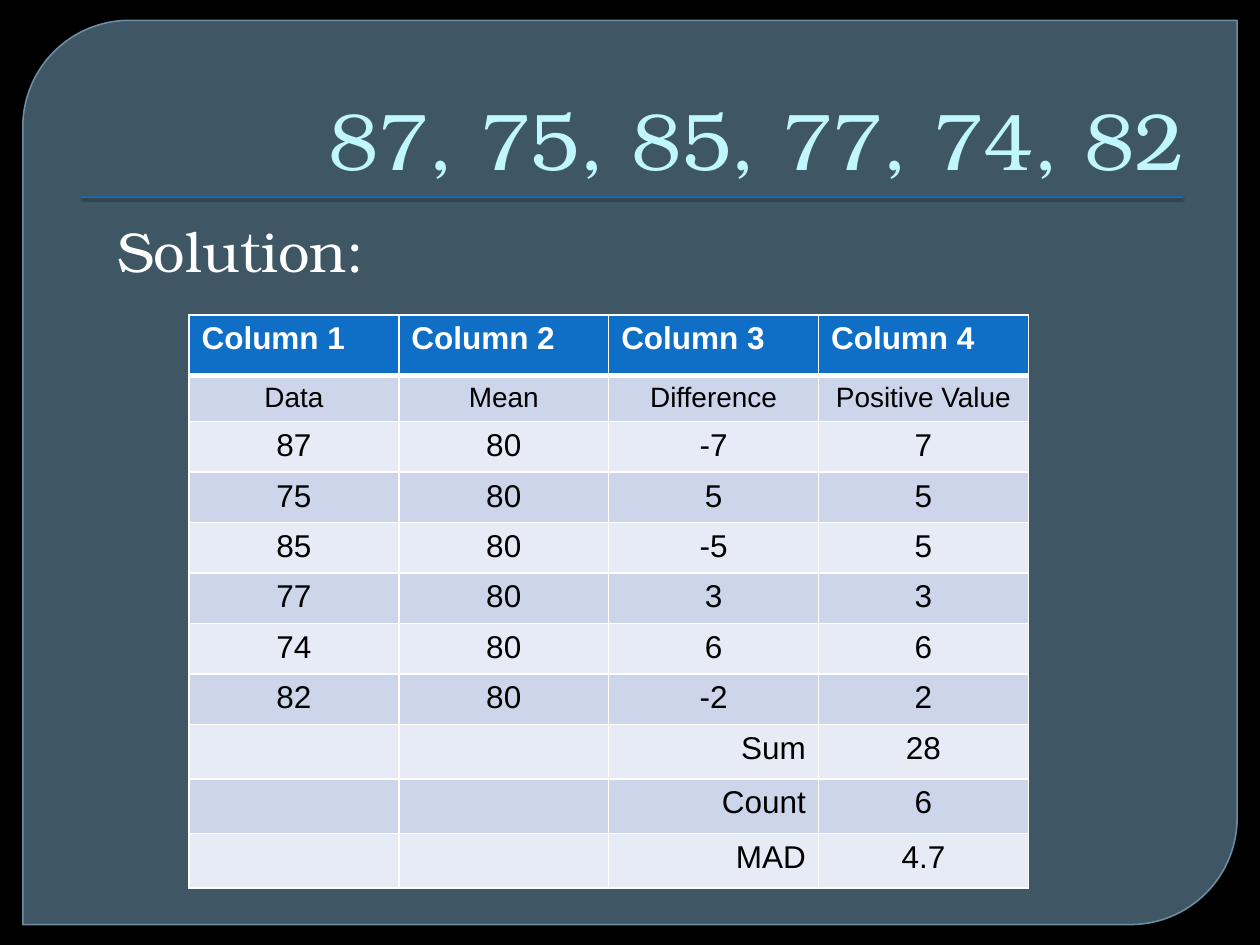
from dataclasses import dataclass

from lxml.etree import SubElement
from pptx import Presentation
from pptx.dml.color import RGBColor
from pptx.enum.shapes import MSO_SHAPE
from pptx.enum.text import MSO_ANCHOR, PP_ALIGN
from pptx.oxml.ns import qn
from pptx.util import Cm, Pt

COLORS = {
    "background": "000000",
    "panel": "61869C",
    "panel_line": "779BB2",
    "accent": "0F6FC6",
    "title": "C0F7FF",
    "white": "FFFFFF",
    "black": "000000",
    "band_dark": "CCD5EA",
    "band_light": "E7EBF5",
}
SERIF = "TeX Gyre Bonum"
SANS = "Arial"
DATA = [87, 75, 85, 77, 74, 82]
MEAN = 80
COLUMN_WIDTH = 4.23


@dataclass
class TextStyle:
    size: float
    font: str
    color: str
    alignment: PP_ALIGN = PP_ALIGN.LEFT
    bold: bool = False


@dataclass
class TextBlock:
    left: float
    top: float
    width: float
    height: float
    text: str
    style: TextStyle
    anchor: MSO_ANCHOR = MSO_ANCHOR.TOP


@dataclass
class TableRow:
    texts: list[str]
    height: float
    size: float = 18


def color(name: str) -> RGBColor:
    return RGBColor.from_string(COLORS[name])


def set_alpha(fill_parent, percent: int) -> None:
    color_element = fill_parent.find(qn("a:solidFill"))[0]
    SubElement(color_element, qn("a:alpha"), val=str(percent * 1000))


def write_text(text_frame, text: str, style: TextStyle) -> None:
    paragraph = text_frame.paragraphs[0]
    paragraph.alignment = style.alignment
    run = paragraph.add_run()
    run.text = text
    run.font.size = Pt(style.size)
    run.font.name = style.font
    run.font.bold = style.bold
    run.font.color.rgb = color(style.color)


def add_text(slide, block: TextBlock) -> None:
    shape = slide.shapes.add_textbox(
        Cm(block.left), Cm(block.top), Cm(block.width), Cm(block.height))
    shape.text_frame.word_wrap = True
    shape.text_frame.vertical_anchor = block.anchor
    write_text(shape.text_frame, block.text, block.style)


def add_panel(slide) -> None:
    panel = slide.shapes.add_shape(
        MSO_SHAPE.ROUND_2_DIAG_RECTANGLE, Cm(0.46), Cm(0.41), Cm(24.48), Cm(18.23))
    panel.adjustments[0] = 0.118
    panel.adjustments[1] = 0
    panel.shadow.inherit = False
    panel.fill.solid()
    panel.fill.fore_color.rgb = color("panel")
    panel.line.color.rgb = color("panel_line")
    panel.line.width = Pt(0.87)
    properties = panel.element.spPr
    set_alpha(properties, 65)
    set_alpha(properties.find(qn("a:ln")), 88)


def add_title_rule(slide) -> None:
    rule = slide.shapes.add_shape(
        MSO_SHAPE.RECTANGLE, Cm(1.63), Cm(3.96), Cm(22.22), Cm(0.03))
    rule.fill.solid()
    rule.fill.fore_color.rgb = color("accent")
    rule.line.fill.background()
    rule.shadow.inherit = False
    effects = rule.element.spPr.find(qn("a:effectLst"))
    shadow = SubElement(effects, qn("a:outerShdw"), blurRad=str(Pt(1)),
                        dist=str(Pt(1)), dir="5400000")
    shadow_color = SubElement(shadow, qn("a:srgbClr"), val=COLORS["black"])
    SubElement(shadow_color, qn("a:alpha"), val="75000")


def add_borders(cell, top: float, bottom: float) -> None:
    properties = cell._tc.get_or_add_tcPr()
    for side, width in (("L", 1), ("R", 1), ("T", top), ("B", bottom)):
        line = SubElement(properties, qn(f"a:ln{side}"), w=str(Pt(width)))
        fill = SubElement(line, qn("a:solidFill"))
        SubElement(fill, qn("a:srgbClr"), val=COLORS["white"])


def cell_style(row_index: int, column_index: int, row: TableRow) -> TextStyle:
    if row_index == 0:
        return TextStyle(row.size, SANS, "white", bold=True)
    is_summary_label = column_index == 2 and not row.texts[0]
    alignment = PP_ALIGN.RIGHT if is_summary_label else PP_ALIGN.CENTER
    return TextStyle(row.size, SANS, "black", alignment)


def add_solution_table(slide, rows: list[TableRow]) -> None:
    column_count = len(rows[0].texts)
    table = slide.shapes.add_table(
        len(rows), column_count, Cm(3.81), Cm(6.35),
        Cm(COLUMN_WIDTH * column_count), Cm(sum(row.height for row in rows))).table
    for column in table.columns:
        column.width = Cm(COLUMN_WIDTH)
    for row_index, row in enumerate(rows):
        table.rows[row_index].height = Cm(row.height)
        band = "band_dark" if row_index % 2 else "band_light"
        for column_index, text in enumerate(row.texts):
            cell = table.cell(row_index, column_index)
            add_borders(cell, top=3 if row_index == 1 else 1,
                        bottom=3 if row_index == 0 else 1)
            cell.fill.solid()
            cell.fill.fore_color.rgb = color("accent" if row_index == 0 else band)
            if text:
                write_text(cell.text_frame, text,
                           cell_style(row_index, column_index, row))


def solution_rows() -> list[TableRow]:
    deviations = [abs(MEAN - value) for value in DATA]
    total, count = sum(deviations), len(deviations)
    summary = [("Sum", str(total)), ("Count", str(count)),
               ("MAD", f"{total / count:.1f}")]
    return [
        TableRow([f"Column {number}" for number in range(1, 5)], 1.22),
        TableRow(["Data", "Mean", "Difference", "Positive Value"], 0.89, 16),
        *[TableRow([str(value), str(MEAN), str(MEAN - value), str(deviation)], 1.01)
          for value, deviation in zip(DATA, deviations)],
        *[TableRow(["", "", label, value], 1.1) for label, value in summary],
    ]


def main() -> None:
    presentation = Presentation()
    presentation.slide_width = Cm(25.4)
    presentation.slide_height = Cm(19.05)
    slide = presentation.slides.add_slide(presentation.slide_layouts[6])
    slide.background.fill.solid()
    slide.background.fill.fore_color.rgb = color("background")

    add_panel(slide)
    add_title_rule(slide)
    add_text(slide, TextBlock(
        1.27, 0.71, 22.86, 3.18, ", ".join(str(value) for value in DATA),
        TextStyle(46, SERIF, "title", PP_ALIGN.RIGHT), MSO_ANCHOR.BOTTOM))
    add_text(slide, TextBlock(
        2.11, 4.24, 22.66, 1.78, "Solution:", TextStyle(32, SERIF, "white")))
    add_solution_table(slide, solution_rows())
    presentation.save("out.pptx")


if __name__ == "__main__":
    main()
